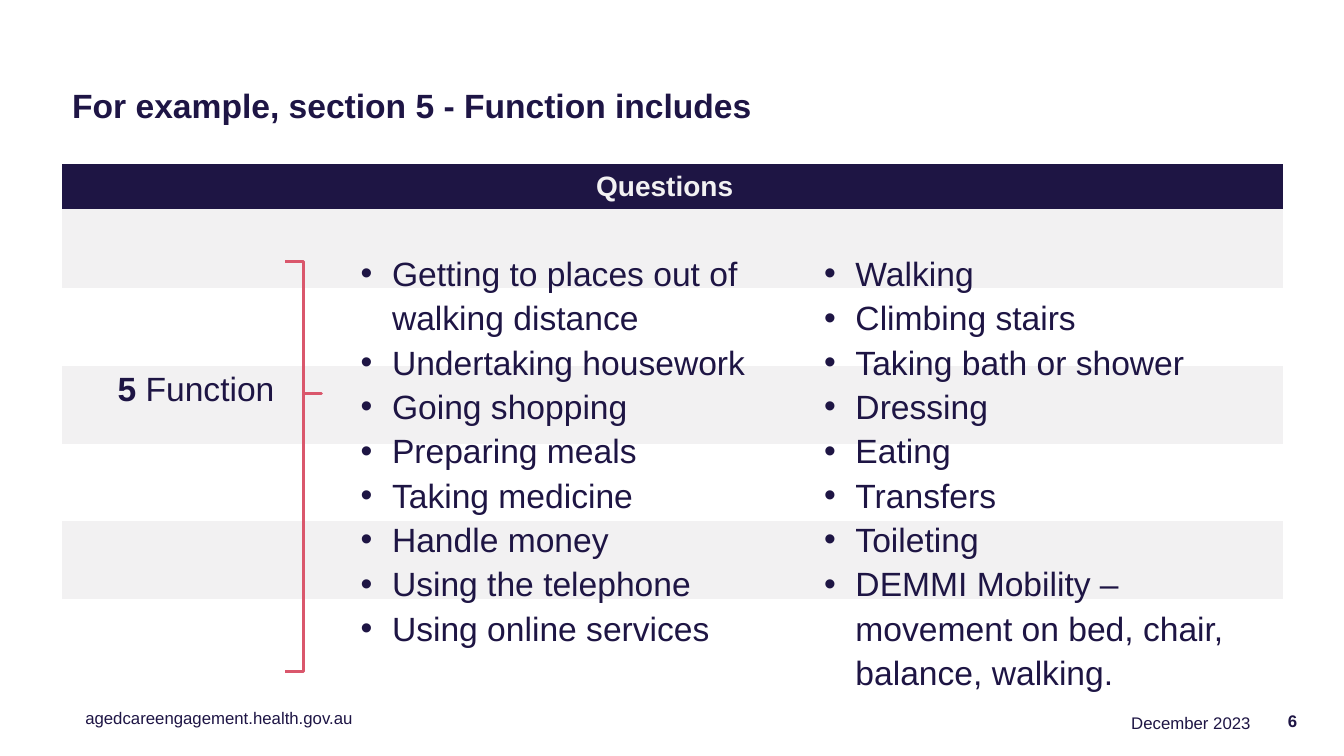
from lxml.etree import SubElement
from pptx import Presentation
from pptx.dml.color import RGBColor
from pptx.enum.shapes import MSO_SHAPE
from pptx.enum.text import MSO_ANCHOR, PP_ALIGN
from pptx.oxml.ns import qn
from pptx.util import Cm, Pt

HUES = {"ink": "1E1545", "navy": "1E1544", "pale": "F2F1F2", "rose": "DA576C"}
COLS = [1.14, 8.41, 1.6, 8.94, 1.45, 9.22]
ROWS = [1.14, 1.98, 1.96, 1.96, 1.96, 1.96, 1.3]
PLAIN = "{2D5ABB26-0587-4C30-8999-92F81FD0307C}"
DAILY = ["Getting to places out of walking distance", "Undertaking housework",
         "Going shopping", "Preparing meals", "Taking medicine",
         "Handle money", "Using the telephone", "Using online services"]
MOVES = ["Walking", "Climbing stairs", "Taking bath or shower", "Dressing",
         "Eating", "Transfers", "Toileting",
         "DEMMI Mobility – movement on bed, chair, balance, walking."]


def hue(name):
    """Return the named colour."""
    return RGBColor.from_string(HUES[name])


def style(para, size, tint="ink", bold=None):
    """Set the font of a paragraph."""
    font = para.font
    font.name, font.size, font.bold = "Arial", Pt(size), bold
    font.color.rgb = hue(tint)


def frame(slide, box):
    """Add a wrapping text box and return its text frame."""
    text = slide.shapes.add_textbox(*map(Cm, box)).text_frame
    text.word_wrap = True
    return text


def label(slide, box, words, size=12, tint="ink", bold=None,
          align=PP_ALIGN.LEFT, anchor=MSO_ANCHOR.TOP):
    """Place one line of text in a box."""
    text = frame(slide, box)
    text.vertical_anchor = anchor
    para = text.paragraphs[0]
    para.text, para.alignment = words, align
    style(para, size, tint, bold)


def bullets(slide, box, items):
    """Place a bulleted list in a box."""
    text = frame(slide, box)
    for num, item in enumerate(items):
        para = text.add_paragraph() if num else text.paragraphs[0]
        para.text, para.line_spacing = item, 1.1
        props = para._p.get_or_add_pPr()
        props.set("marL", str(Cm(0.79)))
        props.set("indent", str(-Cm(0.79)))
        SubElement(props, qn("a:buFont")).set("typeface", "Arial")
        SubElement(props, qn("a:buChar")).set("char", "•")
        style(para, 24, "navy")


def grid(slide, left, top):
    """Draw the banded table with its heading and section name."""
    table = slide.shapes.add_table(
        len(ROWS), len(COLS), Cm(left), Cm(top),
        Cm(sum(COLS)), Cm(sum(ROWS))).table
    table._tbl.tblPr.find(qn("a:tableStyleId")).text = PLAIN
    table.horz_banding = False
    for col, width in zip(table.columns, COLS):
        col.width = Cm(width)
    for num, (row, height) in enumerate(zip(table.rows, ROWS)):
        row.height = Cm(height)
        for cell in row.cells:
            if num % 2 or num == 0:
                cell.fill.solid()
                cell.fill.fore_color.rgb = hue("pale" if num else "navy")
            else:
                cell.fill.background()
    head = table.cell(0, 0)
    head.merge(table.cell(0, len(COLS) - 1))
    head.vertical_anchor = MSO_ANCHOR.MIDDLE
    head.margin_right = Cm(0.65)
    para = head.text_frame.paragraphs[0]
    para.text, para.alignment = "Questions", PP_ALIGN.CENTER
    style(para, 20, "pale", True)
    para = table.cell(3, 1).text_frame.paragraphs[0]
    style(para, 24, "navy")
    for words, bold in (("5", True), (" Function", False)):
        run = para.add_run()
        run.text, run.font.bold = words, bold


def brace(slide, box):
    """Draw the square bracket that joins the section to its questions."""
    shape = slide.shapes.add_shape(MSO_SHAPE.LEFT_BRACE, *map(Cm, box))
    shape.rotation = 180
    shape.adjustments[0] = 0
    shape.adjustments[1] = 0.677
    shape.shadow.inherit = False
    shape.fill.background()
    shape.line.color.rgb = hue("rose")
    shape.line.width = Pt(2.25)


def footer(slide, left, top):
    """Place the address, date and page number along the bottom."""
    label(slide, (left, top, 7.4, 0.76), "agedcareengagement.health.gov.au")
    label(slide, (left + 22.25, top + 0.13, 7.62, 0.76), "December 2023",
          tint="navy", align=PP_ALIGN.RIGHT)
    label(slide, (left + 29.9, top - 0.05, 1.14, 1.02), "6", bold=True,
          align=PP_ALIGN.RIGHT, anchor=MSO_ANCHOR.MIDDLE)


def main():
    """Build the slide and save it."""
    deck = Presentation()
    deck.slide_width, deck.slide_height = Cm(33.87), Cm(19.05)
    slide = deck.slides.add_slide(deck.slide_layouts[6])
    label(slide, (1.57, 1.88, 20.68, 1.52),
          "For example, section 5 - Function includes",
          24, bold=True, anchor=MSO_ANCHOR.MIDDLE)
    grid(slide, 1.57, 4.14)
    brace(slide, (7.19, 6.58, 0.91, 10.34))
    bullets(slide, (8.84, 6.15, 11.99, 10.34), DAILY)
    bullets(slide, (20.52, 6.15, 11.73, 12.57), MOVES)
    footer(slide, 1.9, 17.7)
    deck.save("out.pptx")


if __name__ == "__main__":
    main()
